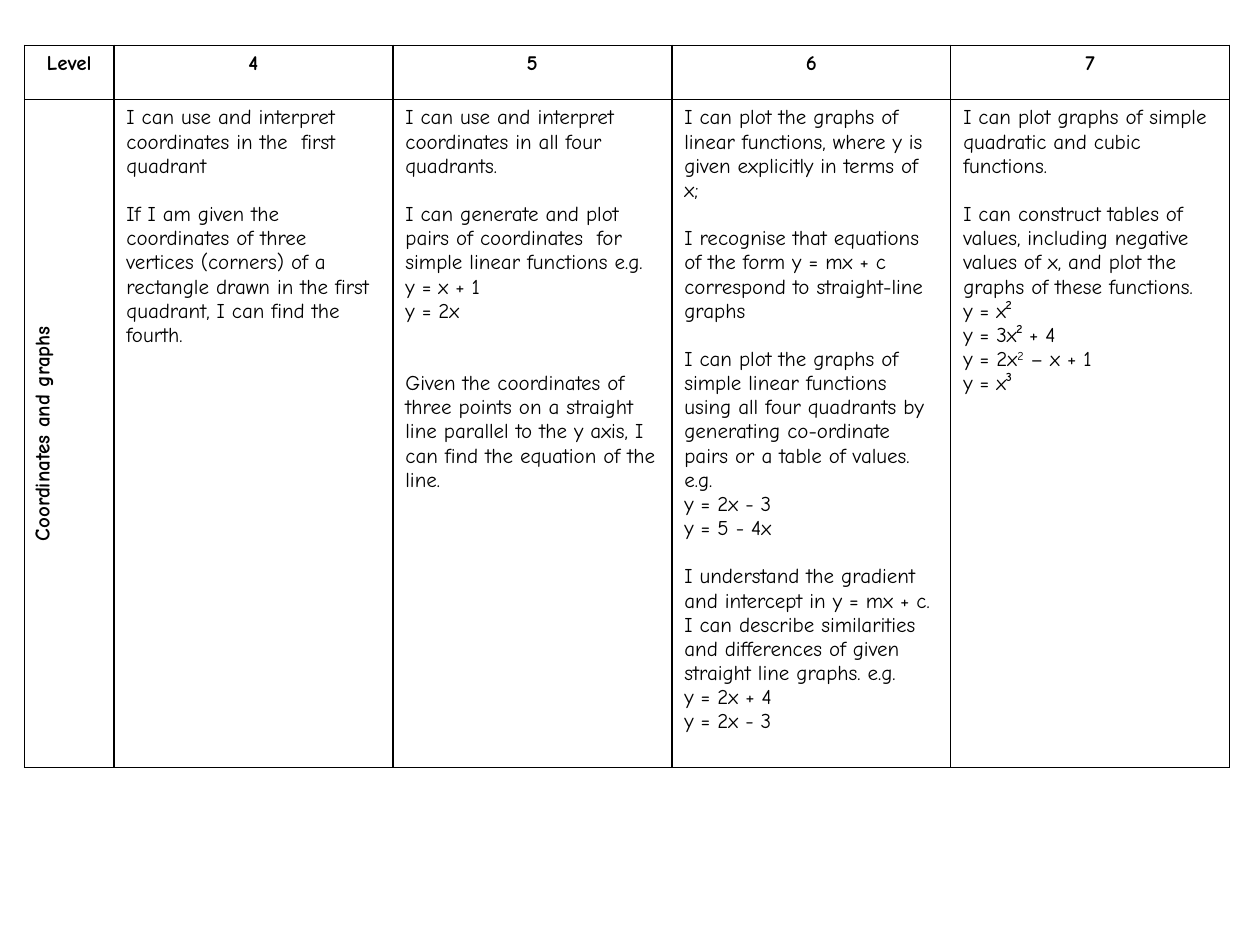
from lxml import etree
from pptx import Presentation
from pptx.dml.color import RGBColor
from pptx.enum import text as t
from pptx.oxml.ns import qn
from pptx.util import Pt

FONT, SIZE, LINE = "Comic Neue", 12, 13.8
BLACK = "000000"

# Content: each paragraph is (text, blank lines above); ^ marks a raised digit
headings = ["Level", "4", "5", "6", "7"]
topic = "Coordinates and graphs"
statements = [
    [("I can use and interpret coordinates in the  first quadrant", 0),
     ("If I am given the coordinates of three vertices (corners) of a rectangle "
      "drawn in the first quadrant, I can find the fourth.", 1)],
    [("I can use and interpret coordinates in all four quadrants.", 0),
     ("I can generate and plot pairs of coordinates  for simple linear functions e.g.", 1),
     ("y = x + 1", 0),
     ("y = 2x", 0),
     ("Given the coordinates of three points on a straight line parallel to the "
      "y axis, I can find the equation of the line.", 2)],
    [("I can plot the graphs of linear functions, where y is given explicitly in "
      "terms of x;", 0),
     ("I recognise that equations of the form y = mx + c correspond to "
      "straight-line graphs", 1),
     ("I can plot the graphs of simple linear functions using all four quadrants by "
      "generating co-ordinate pairs or a table of values.  e.g.", 1),
     ("y = 2x - 3", 0),
     ("y = 5 - 4x", 0),
     ("I understand the gradient and intercept in y = mx + c. I can describe "
      "similarities and differences of given straight line graphs. e.g.", 1),
     ("y = 2x + 4", 0),
     ("y = 2x - 3", 0)],
    [("I can plot graphs of simple quadratic and cubic functions.", 0),
     ("I can construct tables of values, including negative values of x, and plot "
      "the graphs of these functions.", 1),
     ("y = x²", 0),
     ("y = 3x² + 4", 0),
     ("y = 2x^2^ – x + 1", 0),
     ("y = x³", 0)],
]

# Layout in points
LEFT, TOP = 14, 26
COLUMNS = [51.1] + [159.4] * len(statements)
ROWS = [31, 381.7]


def colour(value):
    return RGBColor.from_string(value)


def write(paragraph, content, bold=False, align=t.PP_ALIGN.LEFT, gap=0):
    paragraph.alignment = align
    paragraph.space_before = Pt(gap * LINE)
    for i, part in enumerate(content.split("^")):
        run = paragraph.add_run()
        run.text = part
        run.font.name, run.font.size, run.font.bold = FONT, Pt(SIZE), bold
        run.font.color.rgb = colour(BLACK)
        if i % 2:
            run.font._element.set("baseline", "30000")


def rule(cell, width=1):
    """Draw all four borders, then clear the fill."""
    properties = cell._tc.get_or_add_tcPr()
    for side in ("a:lnL", "a:lnR", "a:lnT", "a:lnB"):
        line = etree.SubElement(properties, qn(side), w=str(Pt(width)))
        fill = etree.SubElement(line, qn("a:solidFill"))
        etree.SubElement(fill, qn("a:srgbClr"), val=BLACK)
    cell.fill.background()


prs = Presentation()
prs.slide_width, prs.slide_height = Pt(720), Pt(540)
slide = prs.slides.add_slide(prs.slide_layouts[6])

# Table grid
levels = slide.shapes.add_table(len(ROWS), len(COLUMNS), Pt(LEFT), Pt(TOP),
                                Pt(sum(COLUMNS)), Pt(sum(ROWS))).table
levels.first_row = levels.horz_banding = False
for column, width in zip(levels.columns, COLUMNS):
    column.width = Pt(width)
for row, height in zip(levels.rows, ROWS):
    row.height = Pt(height)
for cell in levels.iter_cells():
    rule(cell)

# Headings and the turned topic
for i, heading in enumerate(headings):
    write(levels.cell(0, i).text_frame.paragraphs[0], heading,
          bold=True, align=t.PP_ALIGN.CENTER)
topic_cell = levels.cell(1, 0)
topic_cell._tc.get_or_add_tcPr().set("vert", "vert270")
write(topic_cell.text_frame.paragraphs[0], topic, bold=True, align=t.PP_ALIGN.CENTER)

# Statements for each level
for i, paragraphs in enumerate(statements, start=1):
    frame = levels.cell(1, i).text_frame
    for n, (content, gap) in enumerate(paragraphs):
        write(frame.add_paragraph() if n else frame.paragraphs[0], content, gap=gap)

prs.save("out.pptx")
